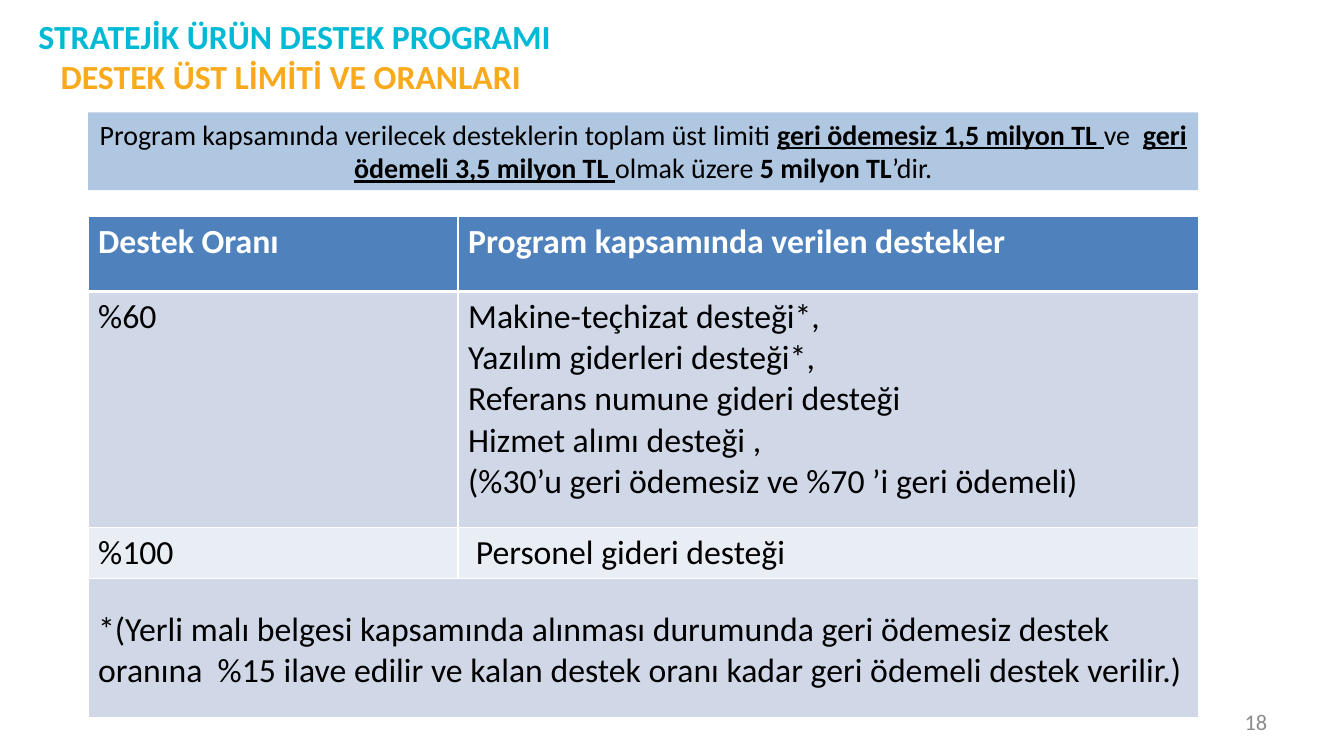
from lxml import etree
from pptx import Presentation
from pptx import util as u
from pptx.dml.color import RGBColor
from pptx.enum import shapes, text
from pptx.oxml.ns import qn

COLORS = {
    "cyan": "00BAD5", "orange": "F9A91C", "white": "FFFFFF", "black": "000000",
    "gray": "8C8C8C", "banner": "B0C7E2", "header": "4F81BD",
    "dark_band": "D0D8E8", "light_band": "E9EDF4",
}
TITLE = "STRATEJİK ÜRÜN DESTEK PROGRAMI"
SUBTITLE = "DESTEK ÜST LİMİTİ VE ORANLARI"
PAGE_NUMBER = "18"
LIMITS = [
    ("Program kapsamında verilecek desteklerin toplam üst limiti ", False, False),
    ("geri ödemesiz 1,5 milyon TL ", True, True),
    ("ve  ", False, False),
    ("geri ödemeli 3,5 milyon TL ", True, True),
    ("olmak üzere ", False, False),
    ("5 milyon TL", True, False),
    ("’dir.", False, False),
]
ROWS = [
    (["Destek Oranı"], ["Program kapsamında verilen destekler"]),
    (["%60"], ["Makine-teçhizat desteği*,",
               "Yazılım giderleri desteği*,",
               "Referans numune gideri desteği",
               "Hizmet alımı desteği ,",
               "(%30’u geri ödemesiz ve %70 ’i geri ödemeli)"]),
    (["%100"], ["Personel gideri desteği"]),
    (["*(Yerli malı belgesi kapsamında alınması durumunda geri ödemesiz destek "
      "oranına  %15 ilave edilir ve kalan destek oranı kadar geri ödemeli destek verilir.)"], []),
]
ROW_HEIGHTS = [53.3, 167.8, 36, 98.6]
ROW_FILLS = ["header", "dark_band", "light_band", "dark_band"]
LEFT, WIDTH = 62.64, 789.84
COLUMN_WIDTHS = [WIDTH / 3, WIDTH * 2 / 3]
STAFF_INDENT, NOTE_INSET = 12.6, 22


def color(name):
    return RGBColor.from_string(COLORS[name])


def add_span(para, words, size, shade, bold=False, underline=False):
    span = para.add_run()
    span.text = words
    font = span.font
    font.name, font.size, font.bold = "Calibri", u.Pt(size), bold
    font.underline = underline
    font.color.rgb = color(shade)


def place(shape, left, top, width, height):
    shape.left, shape.top = u.Pt(left), u.Pt(top)
    shape.width, shape.height = u.Pt(width), u.Pt(height)


def add_panel(page, left, top, width, height, fill, align):
    box = page.shapes.add_shape(shapes.MSO_SHAPE.RECTANGLE,
                                *map(u.Pt, (left, top, width, height)))
    box.shadow.inherit = False
    box.fill.solid()
    box.fill.fore_color.rgb = color(fill)
    box.line.fill.background()
    frame = box.text_frame
    frame.word_wrap = True
    frame.vertical_anchor = text.MSO_ANCHOR.TOP
    frame.paragraphs[0].alignment = align
    return box


def add_borders(cell, widths):
    properties = cell._tc.get_or_add_tcPr()
    for side, width in widths.items():
        line = etree.SubElement(properties, qn("a:ln" + side), w=str(u.Pt(width)))
        fill = etree.SubElement(line, qn("a:solidFill"))
        etree.SubElement(fill, qn("a:srgbClr"), val=COLORS["white"])


def add_support_table(page):
    frame = page.shapes.add_table(len(ROWS), 2, u.Pt(LEFT), u.Pt(154.08),
                                  u.Pt(WIDTH), u.Pt(sum(ROW_HEIGHTS)))
    table = frame.table
    for column, width in zip(table.columns, COLUMN_WIDTHS):
        column.width = u.Pt(width)
    for r, (entries, height, fill) in enumerate(zip(ROWS, ROW_HEIGHTS, ROW_FILLS)):
        table.rows[r].height = u.Pt(height)
        for c, lines in enumerate(entries):
            cell = table.cell(r, c)
            add_borders(cell, {"L": 1, "R": 1, "T": 3 if r == 1 else 1,
                               "B": 3 if r == 0 else 1})
            cell.fill.solid()
            cell.fill.fore_color.rgb = color(fill)
            for i, words in enumerate(lines):
                cell_text = cell.text_frame
                para = cell_text.add_paragraph() if i else cell_text.paragraphs[0]
                add_span(para, words, 24, "black" if r else "white", bold=r == 0)
    table.cell(2, 1).margin_left = u.Pt(STAFF_INDENT)
    note = table.cell(3, 0)
    note.margin_top = u.Pt(NOTE_INSET)
    note.merge(table.cell(3, 1))


def main():
    deck = Presentation()
    deck.slide_width, deck.slide_height = u.Pt(956.16), u.Pt(537.84)
    page = deck.slides.add_slide(deck.slide_layouts[5])

    subtitle = add_panel(page, 36, 36, 378, 36, "white", text.PP_ALIGN.LEFT)
    add_span(subtitle.text_frame.paragraphs[0], SUBTITLE, 24, "orange", bold=True)

    title = page.shapes.title
    place(title, 20.16, -2.88, 861.12, 56.88)
    title.text_frame.auto_size = text.MSO_AUTO_SIZE.NONE
    title.text_frame.vertical_anchor = text.MSO_ANCHOR.MIDDLE
    heading = title.text_frame.paragraphs[0]
    heading.alignment = text.PP_ALIGN.LEFT
    add_span(heading, TITLE, 24, "cyan", bold=True)
    subtitle._element.addnext(title._element)

    add_support_table(page)

    banner = add_panel(page, LEFT, 79.92, WIDTH, 55.44, "banner", text.PP_ALIGN.CENTER)
    for words, bold, underline in LIMITS:
        add_span(banner.text_frame.paragraphs[0], words, 19.9, "black", bold, underline)

    number = page.shapes.add_textbox(*map(u.Pt, (685.44, 498.96, 223.2, 28.8)))
    number.text_frame.word_wrap = True
    number.text_frame.vertical_anchor = text.MSO_ANCHOR.MIDDLE
    para = number.text_frame.paragraphs[0]
    para.alignment = text.PP_ALIGN.RIGHT
    add_span(para, PAGE_NUMBER, 15.9, "gray")

    deck.save("out.pptx")


if __name__ == "__main__":
    main()
